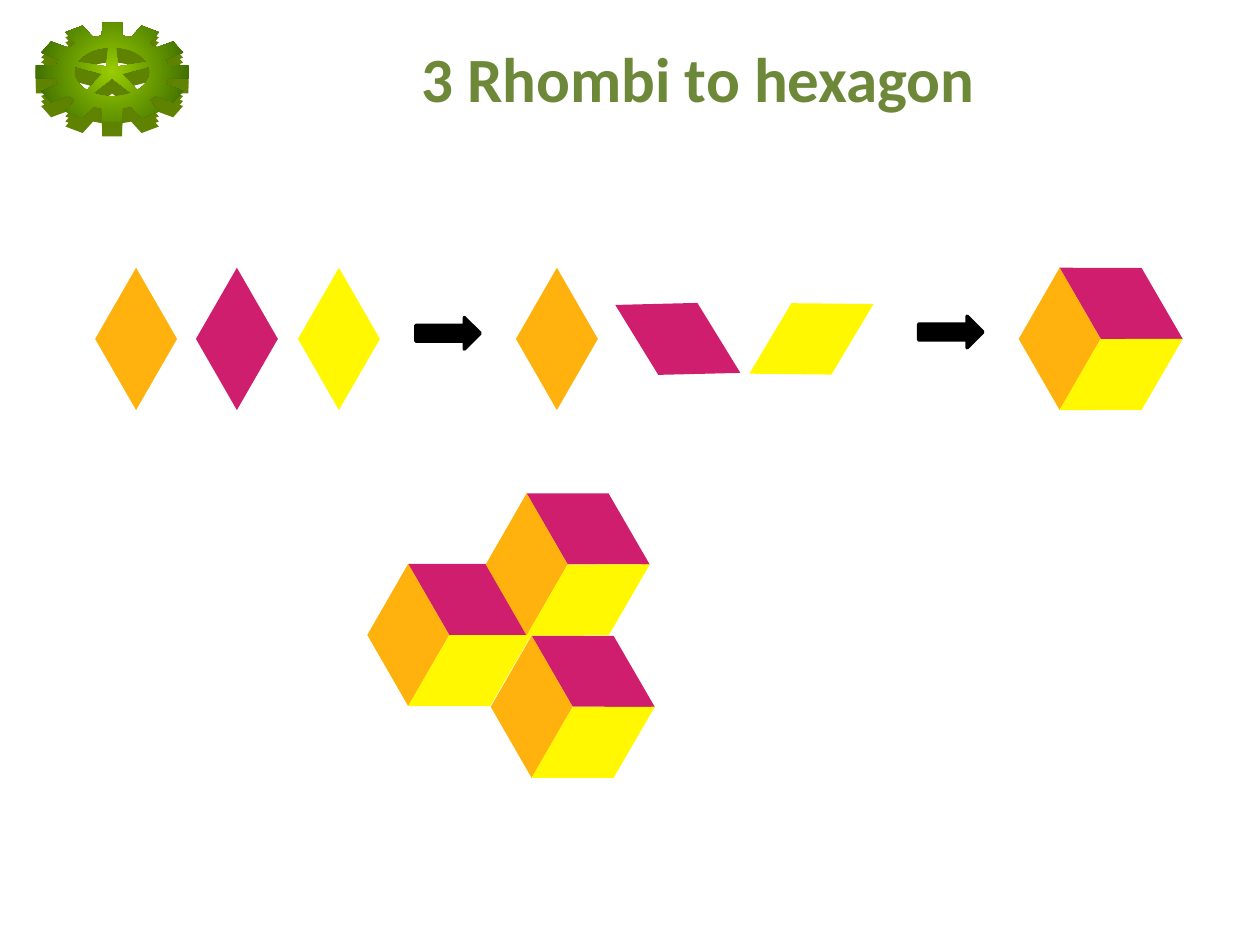
from math import cos, sin, pi

from lxml.etree import SubElement as Sub
from pptx import Presentation
from pptx.dml.color import RGBColor as RGB
from pptx.enum.shapes import MSO_SHAPE as Kind
from pptx.enum.text import MSO_ANCHOR as Anchor, PP_ALIGN as Align
from pptx.oxml.ns import qn
from pptx.util import Inches, Pt

PINK, GOLD, LEMON = "D01E6F", "FFB20D", "FFF800"
WIDE, TALL = 0.65, 1.13


def color(text):
    return RGB.from_string(text)


def paint(shape, fill):
    shape.shadow.inherit = False
    shape.fill.solid()
    shape.fill.fore_color.rgb = color(fill)
    shape.line.fill.background()


def outline(shapes, rings):
    rings = [[(Inches(x), Inches(y)) for x, y in ring] for ring in rings]
    pen = shapes.build_freeform(*rings[0][0])
    pen.add_line_segments(rings[0][1:], close=True)
    for ring in rings[1:]:
        pen.move_to(*ring[0])
        pen.add_line_segments(ring[1:], close=True)
    return pen.convert_to_shape()


def rhombus(shapes, x, y, fill, turn=0):
    dx, dy = WIDE / 2, TALL / 2
    shape = outline(shapes, [[(x, y - dy), (x + dx, y), (x, y + dy), (x - dx, y)]])
    paint(shape, fill)
    shape.rotation = turn


def rhombi(slide, parts):
    group = slide.shapes.add_group_shape()
    for part in parts:
        rhombus(group.shapes, *part)


def hexagon(slide, x, y):
    dx, dy = WIDE * 0.75, TALL / 4
    rhombi(slide, [(x + dx, y - dy, PINK, 300), (x, y, GOLD),
                   (x + dx, y + dy, LEMON, 60)])


def arrow(slide, x, y):
    shape = slide.shapes.add_shape(
        Kind.RIGHT_ARROW, Inches(x), Inches(y), Inches(0.51), Inches(0.25))
    paint(shape, "000000")
    shape.line.color.rgb = color("000000")
    shape.line.width = Pt(2)


def gear_rings(x, y, squash):
    def spot(r, a):
        return x + r * cos(a), y + squash * r * sin(a)

    rim = []
    for i in range(12):
        a = i * pi / 6
        rim += [spot(0.45, a - 0.18), spot(0.61, a - 0.13),
                spot(0.61, a + 0.13), spot(0.45, a + 0.18)]
    rings = [rim]
    step = 2 * pi / 5
    for i in range(5):
        a = i * step - pi / 2
        arc = [a + 0.1 + (step - 0.2) * k / 8 for k in range(9)]
        rings.append([spot(0.08, a + step / 2)] + [spot(0.3, b) for b in arc])
    return rings


def glow(shape, inner, outer):
    shape.fill.gradient()
    for stop, tone in zip(shape.fill.gradient_stops, (inner, outer)):
        stop.color.rgb = color(tone)
    grad = shape._element.spPr.find(qn("a:gradFill"))
    grad.remove(grad.find(qn("a:lin")))
    way = Sub(grad, qn("a:path"), path="circle")
    Sub(way, qn("a:fillToRect"), l="50000", t="50000", r="50000", b="50000")


def gear(slide, x, y):
    for drop in (0.12, 0.08, 0.04):
        paint(outline(slide.shapes, gear_rings(x, y + drop, 0.65)), "5F8200")
    face = outline(slide.shapes, gear_rings(x, y, 0.65))
    paint(face, "99CC00")
    glow(face, "99CC00", "306000")


def heading(slide, text):
    title = slide.shapes.title
    title.left, title.top = Inches(1.5), Inches(0.26)
    title.width, title.height = Inches(8.08), Inches(0.71)
    frame = title.text_frame
    frame.text = text
    frame.vertical_anchor = Anchor.MIDDLE
    line = frame.paragraphs[0]
    line.alignment = Align.CENTER
    font = line.runs[0].font
    font.name, font.size, font.bold = "Calibri", Pt(36), True
    font.color.rgb = color("6D8838")


def main():
    deck = Presentation()
    deck.slide_width, deck.slide_height = Inches(10), Inches(7.5)
    slide = deck.slides.add_slide(deck.slide_layouts[5])
    gear(slide, 0.89, 0.57)
    heading(slide, "3 Rhombi to hexagon")
    row = 2.69
    rhombi(slide, [(1.88, row, PINK), (1.08, row, GOLD), (2.69, row, LEMON)])
    hexagon(slide, 8.41, row)
    rhombi(slide, [(5.38, row, PINK, 298.5), (4.42, row, GOLD),
                   (6.44, row, LEMON, 60.7)])
    arrow(slide, 3.3, 2.52)
    arrow(slide, 7.29, 2.51)
    for x, y in ((3.24, 5.04), (4.22, 5.61), (4.18, 4.48)):
        hexagon(slide, x, y)
    deck.save("out.pptx")


if __name__ == "__main__":
    main()
